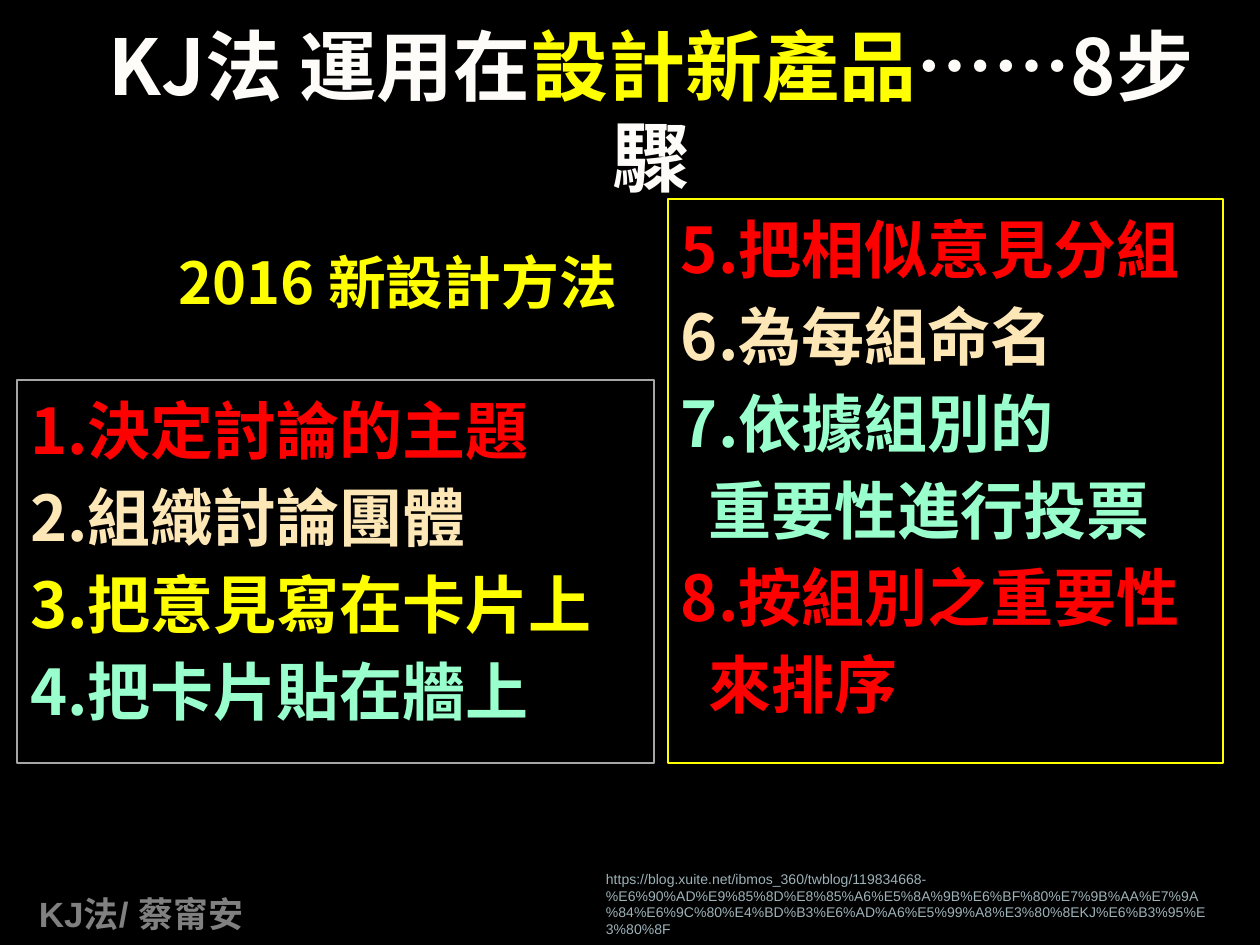
from dataclasses import dataclass

from pptx import Presentation
from pptx.dml.color import RGBColor
from pptx.enum.shapes import MSO_SHAPE
from pptx.enum.text import MSO_ANCHOR, PP_ALIGN
from pptx.oxml.ns import qn
from pptx.util import Emu, Pt

EMU_PER_PX = 914400 // 126
RECTANGLE = MSO_SHAPE.RECTANGLE
TOP, MIDDLE = MSO_ANCHOR.TOP, MSO_ANCHOR.MIDDLE
LEFT, CENTER, RIGHT = PP_ALIGN.LEFT, PP_ALIGN.CENTER, PP_ALIGN.RIGHT


@dataclass(frozen=True)
class Theme:
    background: str = "000000"
    white: str = "FDFCF8"
    yellow: str = "FFFF00"
    red: str = "FF0000"
    cream: str = "FDE7B6"
    mint: str = "99FFCC"
    frame_gray: str = "A6A6A6"
    footer_gray: str = "808080"
    link_gray: str = "9EB2B9"
    cjk_font: str = "Noto Sans CJK SC"
    latin_font: str = "Arial"
    title_size: int = 44
    step_size: int = 36
    subtitle_size: int = 33
    footer_size: int = 20
    link_size: int = 8
    line_ratio: float = 1.18
    step_gap: float = 0.2


THEME = Theme()


def px(length):
    return Emu(length * EMU_PER_PX)


def rgb(color):
    return RGBColor.from_string(color)


def prepare_frame(shape, anchor=TOP, top_inset=6):
    frame = shape.text_frame
    frame.word_wrap = True
    frame.vertical_anchor = anchor
    frame.margin_left = frame.margin_right = px(13)
    frame.margin_top, frame.margin_bottom = px(top_inset), px(6)
    return frame


def fill_paragraph(paragraph, runs, size, font=THEME.cjk_font, bold=True, align=LEFT):
    """Add (text, color) runs with a fixed line pitch."""
    paragraph.alignment = align
    paragraph.line_spacing = Pt(round(size * THEME.line_ratio, 1))
    for text, color in runs:
        run = paragraph.add_run()
        run.text = text
        run.font.size = Pt(size)
        run.font.bold = bold
        run.font.name = font
        run.font.color.rgb = rgb(color)
        properties = run.font._element
        east_asian = properties.makeelement(qn("a:ea"), {"typeface": THEME.cjk_font})
        properties.find(qn("a:latin")).addnext(east_asian)


def add_label(slide, box, runs, size, anchor=TOP, top_inset=6, **style):
    shape = slide.shapes.add_textbox(*map(px, box))
    frame = prepare_frame(shape, anchor, top_inset)
    fill_paragraph(frame.paragraphs[0], runs, size, **style)


def add_step_box(slide, box, frame_color, steps):
    """Add a framed list; steps are (text, color, left indent)."""
    shape = slide.shapes.add_shape(RECTANGLE, *map(px, box))
    shape.shadow.inherit = False
    shape.fill.background()
    shape.line.color.rgb = rgb(frame_color)
    shape.line.width = Pt(0.75)
    frame = prepare_frame(shape, top_inset=13)
    for index, (text, color, indent) in enumerate(steps):
        paragraph = frame.add_paragraph() if index else frame.paragraphs[0]
        fill_paragraph(paragraph, [(text, color)], THEME.step_size)
        if index:
            paragraph.space_before = Pt(round(THEME.step_size * THEME.step_gap, 1))
        if indent:
            paragraph._p.get_or_add_pPr().set("marL", str(px(indent)))


def main():
    presentation = Presentation()
    presentation.slide_width, presentation.slide_height = px(1260), px(945)
    slide = presentation.slides.add_slide(presentation.slide_layouts[6])
    slide.background.fill.solid()
    slide.background.fill.fore_color.rgb = rgb(THEME.background)

    # Title and subtitle
    add_label(slide, (62, 26, 1178, 158),
              [("KJ法 運用在", THEME.white), ("設計新產品", THEME.yellow),
               ("……8步驟", THEME.white)],
              THEME.title_size, anchor=MIDDLE, top_inset=18, align=CENTER)
    add_label(slide, (0, 242, 630, 83), [("2016 新設計方法", THEME.yellow)],
              THEME.subtitle_size, align=RIGHT)

    # Steps 1 to 4
    add_step_box(slide, (17, 380, 637, 383), THEME.frame_gray, [
        ("1.決定討論的主題", THEME.red, 0),
        ("2.組織討論團體", THEME.cream, 0),
        ("3.把意見寫在卡片上", THEME.yellow, 0),
        ("4.把卡片貼在牆上", THEME.mint, 0),
    ])

    # Steps 5 to 8, with indented second lines
    add_step_box(slide, (668, 199, 555, 564), THEME.yellow, [
        ("5.把相似意見分組", THEME.red, 0),
        ("6.為每組命名", THEME.cream, 0),
        ("7.依據組別的", THEME.mint, 0),
        ("重要性進行投票", THEME.mint, 28),
        ("8.按組別之重要性", THEME.red, 0),
        ("來排序", THEME.red, 28),
    ])

    # Source link and footer
    link = ("https://blog.xuite.net/ibmos_360/twblog/119834668-"
            "%E6%90%AD%E9%85%8D%E8%85%A6%E5%8A%9B%E6%BF%80%E7%9B%AA%E7%9A%84"
            "%E6%9C%80%E4%BD%B3%E6%AD%A6%E5%99%A8%E3%80%8EKJ%E6%B3%95%E3%80%8F")
    add_label(slide, (593, 865, 630, 80), [(link, THEME.link_gray)],
              THEME.link_size, font=THEME.latin_font, bold=False)
    add_label(slide, (26, 887, 630, 55), [("KJ法/ 蔡甯安", THEME.footer_gray)],
              THEME.footer_size, font=THEME.latin_font)

    presentation.save("out.pptx")


if __name__ == "__main__":
    main()
